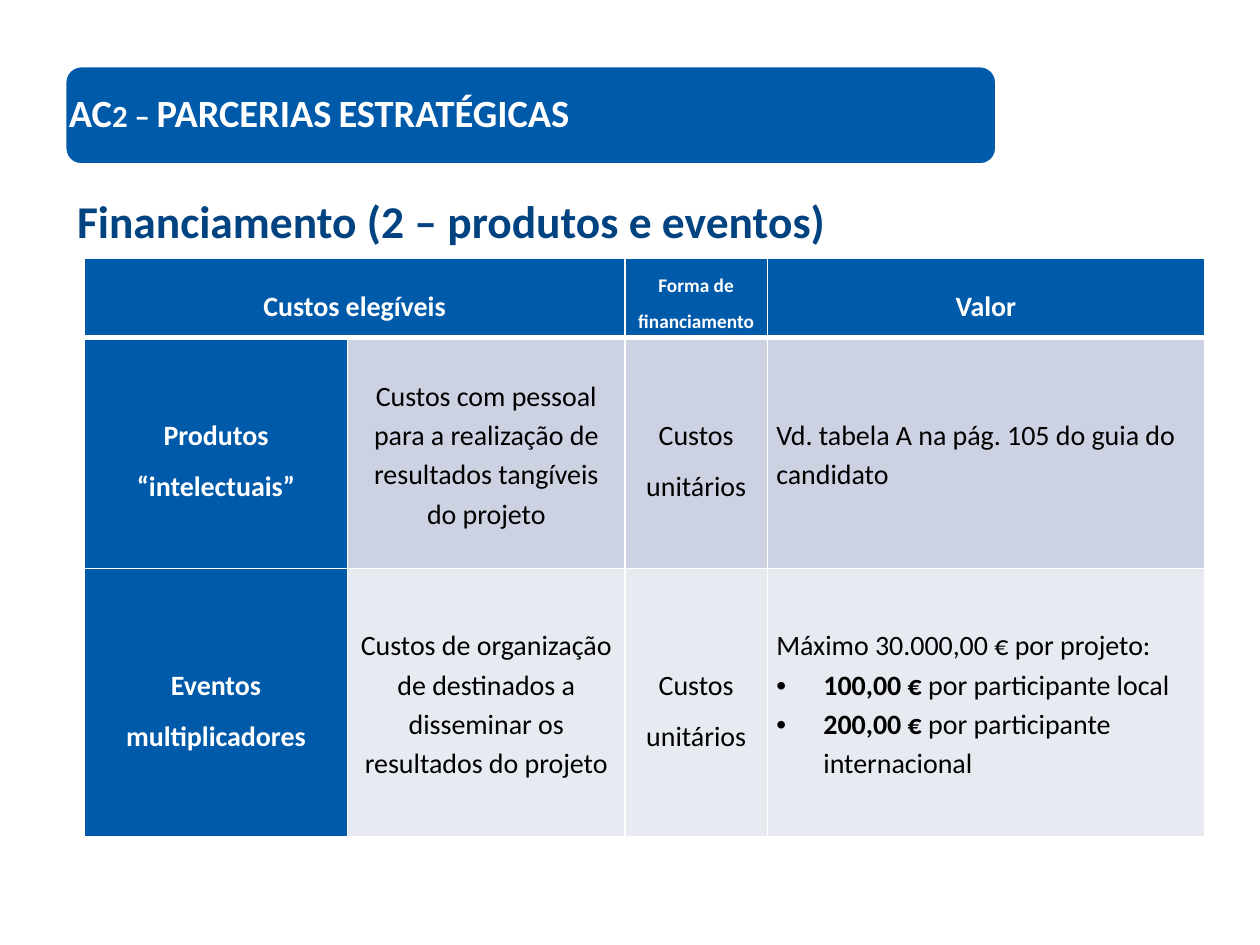
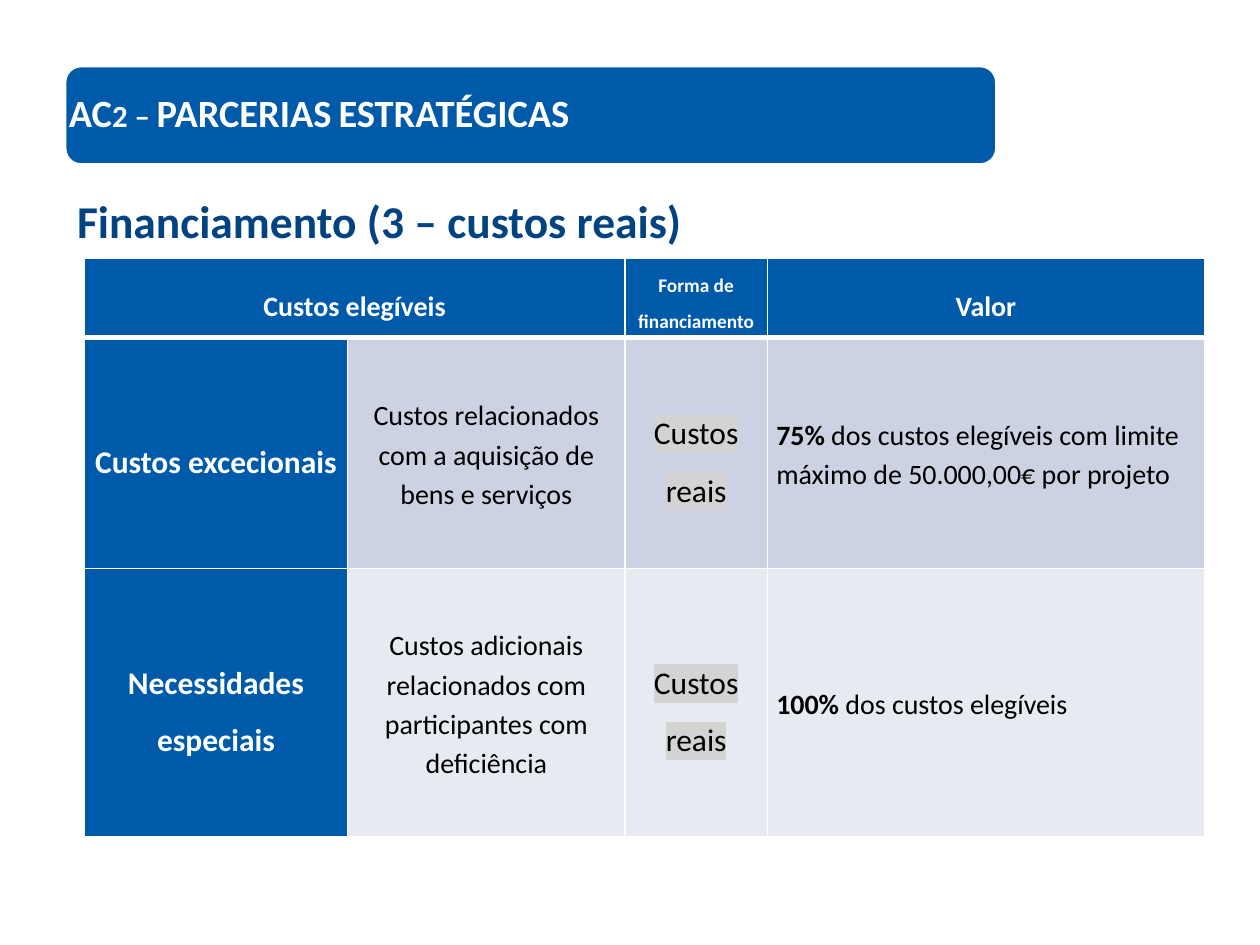
from lxml import etree
from pptx import Presentation
from pptx.dml.color import RGBColor
from pptx.enum.shapes import MSO_SHAPE
from pptx.enum.text import MSO_ANCHOR, MSO_AUTO_SIZE, PP_ALIGN
from pptx.oxml.ns import qn
from pptx.util import Cm, Pt

ROUNDED = MSO_SHAPE.ROUNDED_RECTANGLE
MIDDLE, TOP = MSO_ANCHOR.MIDDLE, MSO_ANCHOR.TOP
LEFT, CENTER = PP_ALIGN.LEFT, PP_ALIGN.CENTER
NO_AUTOFIT = MSO_AUTO_SIZE.NONE
TITLE_ONLY = 5

FONT = "Calibri"
BLUE, NAVY, WHITE, BLACK = "005AAA", "004380", "FFFFFF", "000000"
ROW_FILLS = ("CCD2E2", "E7EAF1")
HIGHLIGHT = "D3D3D3"

COLUMN_WIDTHS = (5.31, 5.59, 2.87, 8.81)
ROW_HEIGHTS = (1.6, 4.65, 5.41)
THIN, THICK = 1, 3

LOOSE = {"alignment": CENTER, "line_spacing": 1.5,
         "space_before": Pt(6), "space_after": Pt(6)}
CENTERED = {"alignment": CENTER, "line_spacing": 1.15}
LEFT_ALIGNED = {"alignment": LEFT, "line_spacing": 1.15}
CELL_FORMAT = {"vertical_anchor": MIDDLE, "margin_left": Cm(0.18),
               "margin_right": Cm(0.18), "margin_top": 0, "margin_bottom": 0}

BAND_TEXT = "AC2 – PARCERIAS ESTRATÉGICAS"
HEADERS = (("Custos elegíveis", 16), None, ("Forma de financiamento", 11), ("Valor", 16))

# Each cost row: name, description, form of funding, value paragraphs.
# A value paragraph is a list of (text, bold) runs; those after the first are bulleted.
FUNDING_SLIDES = (
    {
        "title": "Financiamento (2 – produtos e eventos)",
        "label_size": 16,
        "highlight": None,
        "costs": (
            ("Produtos “intelectuais”",
             "Custos com pessoal para a realização de resultados tangíveis do projeto",
             "Custos unitários",
             [[("Vd. tabela A na pág. 105 do guia do candidato", False)]]),
            ("Eventos multiplicadores",
             "Custos de organização de destinados a disseminar os resultados do projeto",
             "Custos unitários",
             [[("Máximo 30.000,00 € por projeto:", False)],
              [("100,00 €", True), (" por participante local", False)],
              [("200,00 €", True), (" por participante internacional", False)]]),
        ),
    },
    {
        "title": "Financiamento (3 – custos reais)",
        "label_size": 18,
        "highlight": HIGHLIGHT,
        "costs": (
            ("Custos excecionais",
             "Custos relacionados com a aquisição de bens e serviços",
             "Custos reais",
             [[("75%", True),
               (" dos custos elegíveis com limite máximo de 50.000,00€ por projeto", False)]]),
            ("Necessidades especiais",
             "Custos adicionais relacionados com participantes com deficiência",
             "Custos reais",
             [[("100%", True), (" dos custos elegíveis", False)]]),
        ),
    },
)


def rgb(color):
    return RGBColor.from_string(color)


def apply_format(target, values):
    for name, value in values.items():
        setattr(target, name, value)


def add_run(paragraph, text, size, color, bold=False):
    run = paragraph.add_run()
    run.text = text
    apply_format(run.font, {"name": FONT, "size": Pt(size), "bold": bold})
    run.font.color.rgb = rgb(color)
    return run


def highlight_run(run, color):
    properties = run._r.get_or_add_rPr()
    highlight = etree.Element(qn("a:highlight"))
    etree.SubElement(highlight, qn("a:srgbClr"), val=color)
    properties.find(qn("a:solidFill")).addnext(highlight)


def add_bullet(paragraph):
    properties = paragraph._p.get_or_add_pPr()
    indent = Cm(0.95)
    properties.set("marL", str(indent))
    properties.set("indent", str(-indent))
    etree.SubElement(properties, qn("a:buFont"), typeface="Arial")
    etree.SubElement(properties, qn("a:buChar"), char="•")


def set_borders(cell, top, bottom):
    """Draw white cell borders; top and bottom are widths in points."""
    properties = cell._tc.get_or_add_tcPr()
    for side, width in (("L", THIN), ("R", THIN), ("T", top), ("B", bottom)):
        line = etree.SubElement(properties, qn(f"a:ln{side}"), w=str(Pt(width)))
        fill = etree.SubElement(line, qn("a:solidFill"))
        etree.SubElement(fill, qn("a:srgbClr"), val=WHITE)


def fill_cell(cell, color):
    cell.fill.solid()
    cell.fill.fore_color.rgb = rgb(color)


def write_cell(cell, text, paragraph_format, size, color, bold=False):
    paragraph = cell.text_frame.paragraphs[0]
    apply_format(paragraph, paragraph_format)
    return add_run(paragraph, text, size, color, bold)


def write_value(cell, value):
    frame = cell.text_frame
    for index, runs in enumerate(value):
        paragraph = frame.add_paragraph() if index else frame.paragraphs[0]
        apply_format(paragraph, LEFT_ALIGNED)
        if index:
            add_bullet(paragraph)
        for text, bold in runs:
            add_run(paragraph, text, 16, BLACK, bold)


def add_band(slide):
    band = slide.shapes.add_shape(ROUNDED, Cm(1.3), Cm(1.32), Cm(18.8), Cm(2.01))
    band.shadow.inherit = False
    band.fill.solid()
    band.fill.fore_color.rgb = rgb(BLUE)
    band.line.color.rgb = rgb(WHITE)
    band.line.width = Pt(2.25)

    label = slide.shapes.add_textbox(Cm(1.09), Cm(1.42), Cm(19), Cm(1.8))
    inset = Cm(0.3)
    apply_format(label.text_frame, {
        "word_wrap": True, "vertical_anchor": MIDDLE, "margin_left": inset,
        "margin_right": inset, "margin_top": inset, "margin_bottom": inset})
    paragraph = label.text_frame.paragraphs[0]
    paragraph.line_spacing = 0.9
    run = add_run(paragraph, BAND_TEXT, 22, WHITE, True)
    run._r.get_or_add_rPr().set("cap", "small")


def set_title(slide, text):
    title = slide.shapes.title
    apply_format(title, {"left": Cm(1.3), "top": Cm(3.76),
                         "width": Cm(20.12), "height": Cm(1.37)})
    apply_format(title.text_frame, {"vertical_anchor": TOP, "word_wrap": True,
                                    "auto_size": NO_AUTOFIT})
    paragraph = title.text_frame.paragraphs[0]
    paragraph.alignment = LEFT
    add_run(paragraph, text, 26, NAVY, True)


def add_funding_table(slide, costs, label_size, highlight):
    frame = slide.shapes.add_table(
        len(ROW_HEIGHTS), len(COLUMN_WIDTHS), Cm(1.7), Cm(5.21),
        Cm(sum(COLUMN_WIDTHS)), Cm(sum(ROW_HEIGHTS)))
    table = frame.table
    table.horz_banding = False
    for column, width in zip(table.columns, COLUMN_WIDTHS):
        column.width = Cm(width)
    for index, (row, height) in enumerate(zip(table.rows, ROW_HEIGHTS)):
        row.height = Cm(height)
        for column_index, cell in enumerate(row.cells):
            apply_format(cell, CELL_FORMAT)
            set_borders(cell, THICK if index == 1 else THIN, THICK if index == 0 else THIN)
            is_header = index == 0 or column_index == 0
            fill_cell(cell, BLUE if is_header else ROW_FILLS[index - 1])

    table.cell(0, 0).merge(table.cell(0, 1))
    for cell, header in zip(table.rows[0].cells, HEADERS):
        if header:
            text, size = header
            write_cell(cell, text, LOOSE, size, WHITE, True)

    for index, (name, description, form, value) in enumerate(costs, start=1):
        name_cell, description_cell, form_cell, value_cell = table.rows[index].cells
        write_cell(name_cell, name, LOOSE, label_size, WHITE, True)
        write_cell(description_cell, description, CENTERED, 16, BLACK)
        form_run = write_cell(form_cell, form, LOOSE, label_size, BLACK)
        if highlight:
            highlight_run(form_run, highlight)
        write_value(value_cell, value)


def main():
    presentation = Presentation()
    presentation.slide_width, presentation.slide_height = Cm(25.4), Cm(19.05)
    for content in FUNDING_SLIDES:
        slide = presentation.slides.add_slide(presentation.slide_layouts[TITLE_ONLY])
        add_band(slide)
        set_title(slide, content["title"])
        add_funding_table(slide, content["costs"], content["label_size"], content["highlight"])
    presentation.save("out.pptx")


if __name__ == "__main__":
    main()
